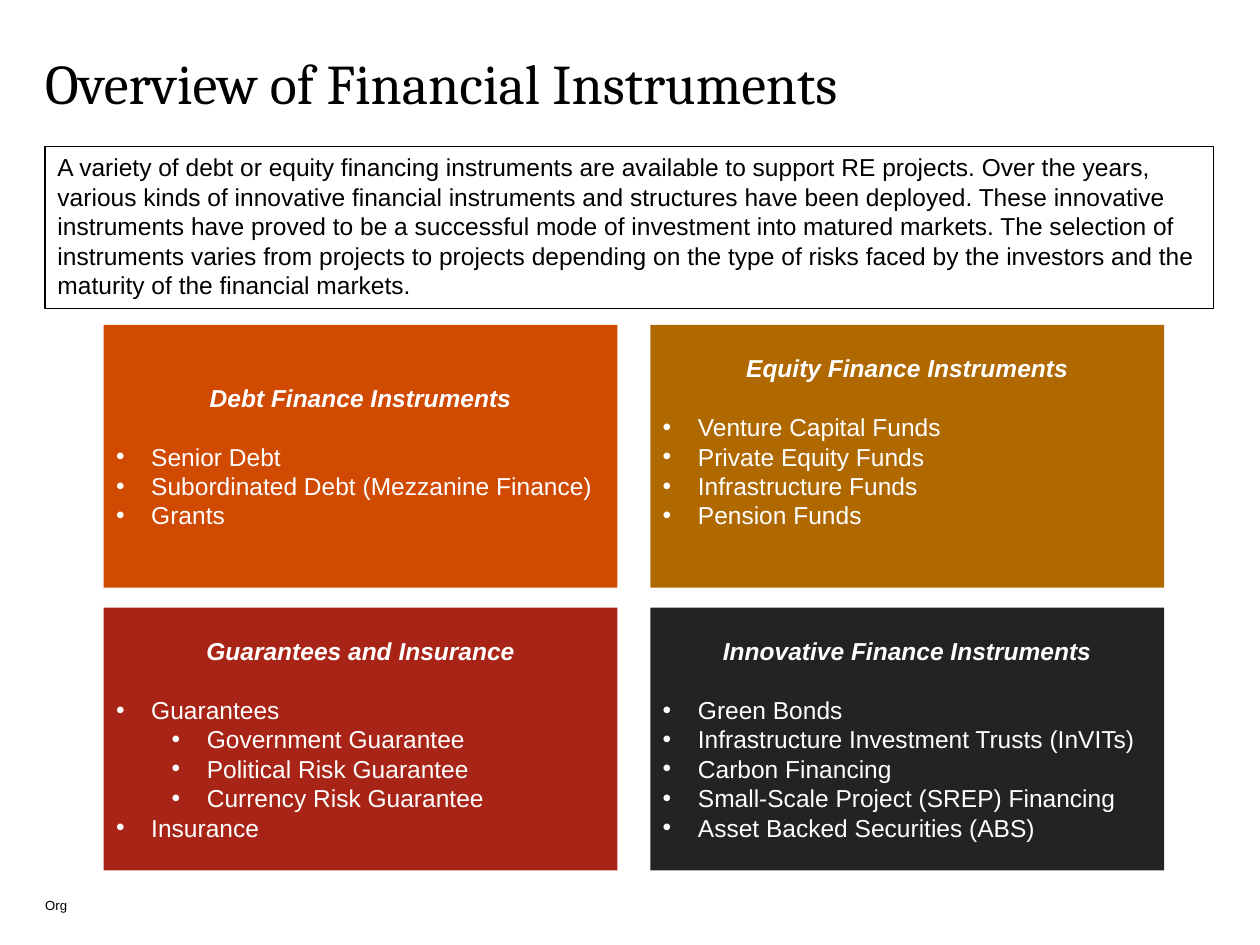
from dataclasses import dataclass

from lxml import etree
from pptx import Presentation
from pptx.dml.color import RGBColor
from pptx.enum.shapes import MSO_SHAPE
from pptx.enum.text import MSO_ANCHOR, PP_ALIGN
from pptx.oxml.ns import qn
from pptx.util import Cm, Pt

RECT = MSO_SHAPE.RECTANGLE
TOP, MIDDLE, BOTTOM = MSO_ANCHOR.TOP, MSO_ANCHOR.MIDDLE, MSO_ANCHOR.BOTTOM
LEFT, CENTER = PP_ALIGN.LEFT, PP_ALIGN.CENTER


@dataclass(frozen=True)
class Theme:
    black: str = "000000"
    white: str = "FFFFFF"
    orange: str = "D04A02"
    ochre: str = "B06900"
    red: str = "A82417"
    dark: str = "232323"
    head: str = "Cambria"
    body: str = "Arial"
    title: float = 32
    text: float = 14
    foot: float = 7.5
    line: float = 16.8


theme = Theme()


def style(para, text, size, color, font=theme.body, bold=False):
    """Fill a paragraph; bold headings are italic too."""
    para.text = text
    face = para.runs[0].font
    face.name, face.size = font, Pt(size)
    face.bold = face.italic = bold
    face.color.rgb = RGBColor.from_string(color)


def bullet(para, level):
    """Hang a round bullet at the indent of its level."""
    para.level = level
    props = para._p.get_or_add_pPr()
    props.set("marL", str(Cm(0.71 + 1.12 * level)))
    props.set("indent", str(Cm(-0.71)))
    etree.SubElement(props, qn("a:buFont")).set("typeface", theme.body)
    etree.SubElement(props, qn("a:buChar")).set("char", "•")


deck = Presentation()
deck.slide_width, deck.slide_height = Cm(25.4), Cm(19.05)
slide = deck.slides.add_slide(deck.slide_layouts[6])
shapes = slide.shapes

# Title and footer
labels = [
    ("Overview of Financial Instruments", 1.19, 23.55, 1.73, TOP,
     theme.title, theme.head, 0.85),
    ("Org", 18.03, 11.4, 0.38, BOTTOM, theme.foot, theme.body, 1.0),
]
for text, top, width, height, anchor, size, font, space in labels:
    frame = shapes.add_textbox(Cm(0.91), Cm(top), Cm(width), Cm(height)).text_frame
    frame.word_wrap = True
    frame.vertical_anchor = anchor
    frame.margin_left = frame.margin_right = 0
    frame.margin_top = frame.margin_bottom = 0
    para = frame.paragraphs[0]
    style(para, text, size, theme.black, font)
    para.line_spacing = space

# Introduction
intro = shapes.add_shape(RECT, Cm(0.91), Cm(2.95), Cm(23.55), Cm(3.27))
intro.shadow.inherit = False
intro.fill.background()
intro.line.color.rgb = RGBColor.from_string(theme.black)
intro.line.width = Pt(0.75)
frame = intro.text_frame
frame.word_wrap = True
frame.vertical_anchor = TOP
para = frame.paragraphs[0]
style(
    para,
    "A variety of debt or equity financing instruments are available to support "
    "RE projects. Over the years, various kinds of innovative financial "
    "instruments and structures have been deployed. These innovative instruments "
    "have proved to be a successful mode of investment into matured markets. The "
    "selection of instruments varies from projects to projects depending on the "
    "type of risks faced by the investors and the maturity of the financial "
    "markets.",
    theme.text, theme.black,
)
para.alignment = LEFT
para.line_spacing = Pt(theme.line)

# Cards: heading, fill, bottom margin, (level, item) pairs
cards = [
    ("Debt Finance Instruments", theme.orange, 0.13, [
        (0, "Senior Debt"),
        (0, "Subordinated Debt (Mezzanine Finance)"),
        (0, "Grants")]),
    ("Equity Finance Instruments", theme.ochre, 0.72, [
        (0, "Venture Capital Funds"),
        (0, "Private Equity Funds"),
        (0, "Infrastructure Funds"),
        (0, "Pension Funds")]),
    ("Guarantees and Insurance", theme.red, 0.13, [
        (0, "Guarantees"),
        (1, "Government Guarantee"),
        (1, "Political Risk Guarantee"),
        (1, "Currency Risk Guarantee"),
        (0, "Insurance")]),
    ("Innovative Finance Instruments", theme.dark, 0.13, [
        (0, "Green Bonds"),
        (0, "Infrastructure Investment Trusts (InVITs)"),
        (0, "Carbon Financing"),
        (0, "Small-Scale Project (SREP) Financing"),
        (0, "Asset Backed Securities (ABS)")]),
]
for n, (head, color, margin, items) in enumerate(cards):
    row, col = divmod(n, 2)
    card = shapes.add_shape(
        RECT, Cm(2.09 + 11.02 * col), Cm(6.55 + 5.7 * row), Cm(10.36), Cm(5.3))
    card.shadow.inherit = False
    card.fill.solid()
    card.fill.fore_color.rgb = RGBColor.from_string(color)
    card.line.fill.background()
    frame = card.text_frame
    frame.word_wrap = True
    frame.vertical_anchor = MIDDLE
    frame.margin_bottom = Cm(margin)
    para = frame.paragraphs[0]
    style(para, head, theme.text, theme.white, bold=True)
    para.alignment = CENTER
    para.line_spacing = Pt(theme.line)
    para.space_after = Pt(theme.line)
    for level, item in items:
        para = frame.add_paragraph()
        style(para, item, theme.text, theme.white)
        para.alignment = LEFT
        para.line_spacing = Pt(theme.line)
        bullet(para, level)

deck.save("out.pptx")
